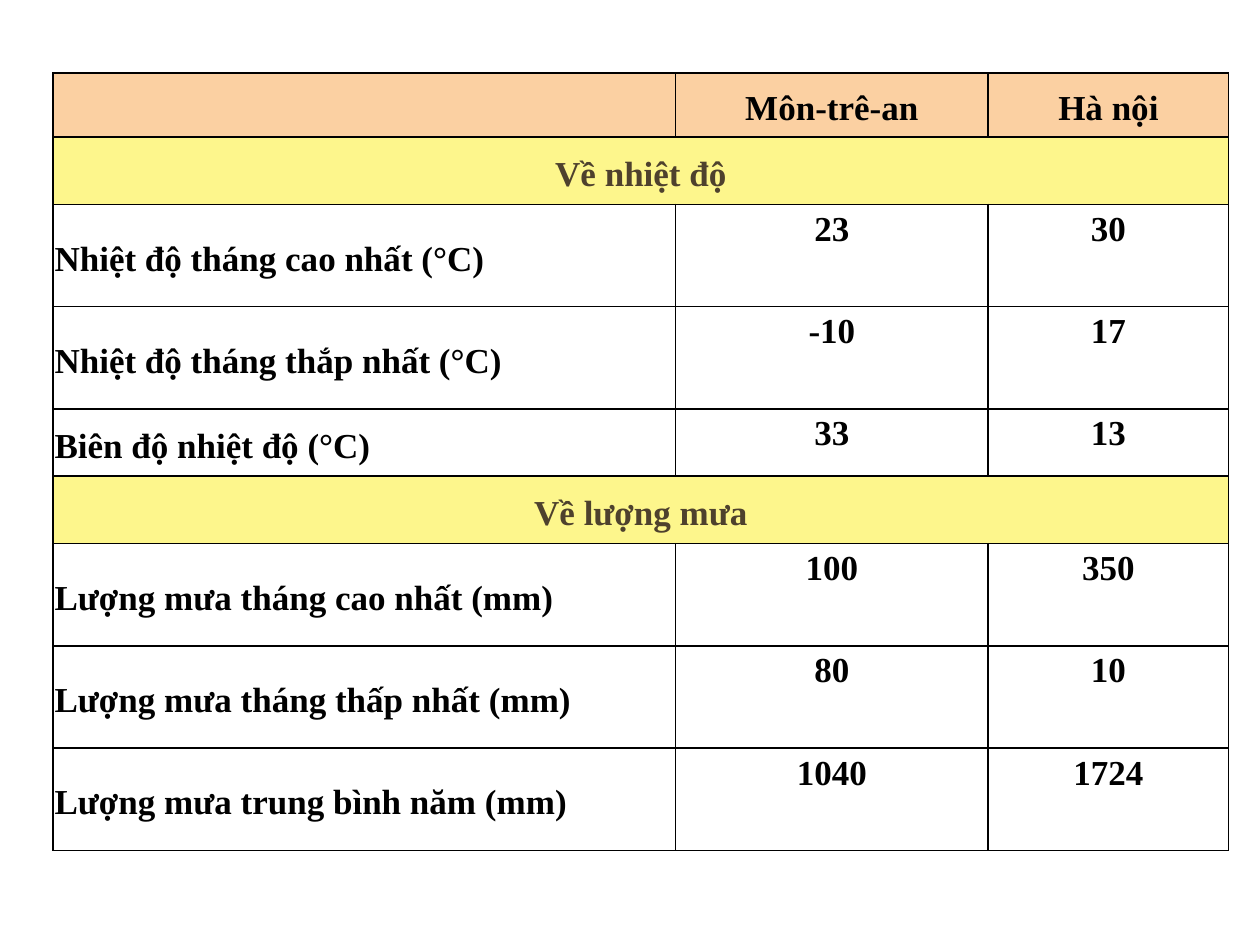
from lxml import etree
from pptx import Presentation
from pptx import util as u
from pptx.dml.color import RGBColor
from pptx.enum import text
from pptx.oxml.ns import qn

Cm, Pt = u.Cm, u.Pt
FONT = "Times New Roman"
INK = {"head": "FBD0A2", "band": "FDF68C", "plain": "FFFFFF",
       "text": "000000", "brown": "4E412D", "line": "000000"}
MID, TOP = text.MSO_ANCHOR.MIDDLE, text.MSO_ANCHOR.TOP
LEFT, CENTER = text.PP_ALIGN.LEFT, text.PP_ALIGN.CENTER


def write(cell, words, fill="plain", color="text", align=CENTER, anchor=MID, space=1.2):
    cell.fill.solid()
    cell.fill.fore_color.rgb = RGBColor.from_string(INK[fill])
    cell.margin_left = cell.margin_right = Cm(0.03)
    cell.margin_top = cell.margin_bottom = 0
    cell.vertical_anchor = anchor
    if not words:
        return
    para = cell.text_frame.paragraphs[0]
    para.alignment, para.line_spacing = align, space
    run = para.add_run()
    run.text = words
    font = run.font
    font.name, font.size, font.bold = FONT, Pt(20), True
    font.color.rgb = RGBColor.from_string(INK[color])


def frame(cell):
    """Draw a thin line on all four sides of a cell."""
    props = cell._tc.get_or_add_tcPr()
    for i, side in enumerate(("a:lnL", "a:lnR", "a:lnT", "a:lnB")):
        line = etree.Element(qn(side), w=str(Pt(1)))
        fill = etree.SubElement(line, qn("a:solidFill"))
        etree.SubElement(fill, qn("a:srgbClr"), val=INK["line"])
        props.insert(i, line)


# Each row: height in cm, then its texts; a single text spans the table.
rows = [
    (1.29, "", "Môn-trê-an", "Hà nội"),
    (1.36, "Về nhiệt độ"),
    (2.06, "Nhiệt độ tháng cao nhất (°C)", "23", "30"),
    (2.06, "Nhiệt độ tháng thắp nhất (°C)", "-10", "17"),
    (1.36, "Biên độ nhiệt độ (°C)", "33", "13"),
    (1.36, "Về lượng mưa"),
    (2.06, "Lượng mưa tháng cao nhất (mm)", "100", "350"),
    (2.06, "Lượng mưa tháng thấp nhất (mm)", "80", "10"),
    (2.06, "Lượng mưa trung bình năm (mm)", "1040", "1724"),
]
cols = [12.55, 6.3, 4.85]

deck = Presentation()
deck.slide_width, deck.slide_height = Cm(25.4), Cm(19.05)
slide = deck.slides.add_slide(deck.slide_layouts[6])
table = slide.shapes.add_table(len(rows), len(cols), Cm(1.07), Cm(1.47),
                               Cm(sum(cols)), Cm(sum(row[0] for row in rows))).table
table.horz_banding = False
for col, width in zip(table.columns, cols):
    col.width = Cm(width)

for r, (height, *words) in enumerate(rows):
    table.rows[r].height = Cm(height)
    if len(words) == 1:
        table.cell(r, 0).merge(table.cell(r, len(cols) - 1))
    for c, word in enumerate(words):
        cell = table.cell(r, c)
        if r == 0:
            write(cell, word, fill="head")
        elif len(words) == 1:
            write(cell, word, fill="band", color="brown")
        elif c == 0:
            write(cell, word, align=LEFT)
        else:
            write(cell, word, anchor=TOP, space=1.15)

for cell in table.iter_cells():
    frame(cell)

deck.save("out.pptx")
